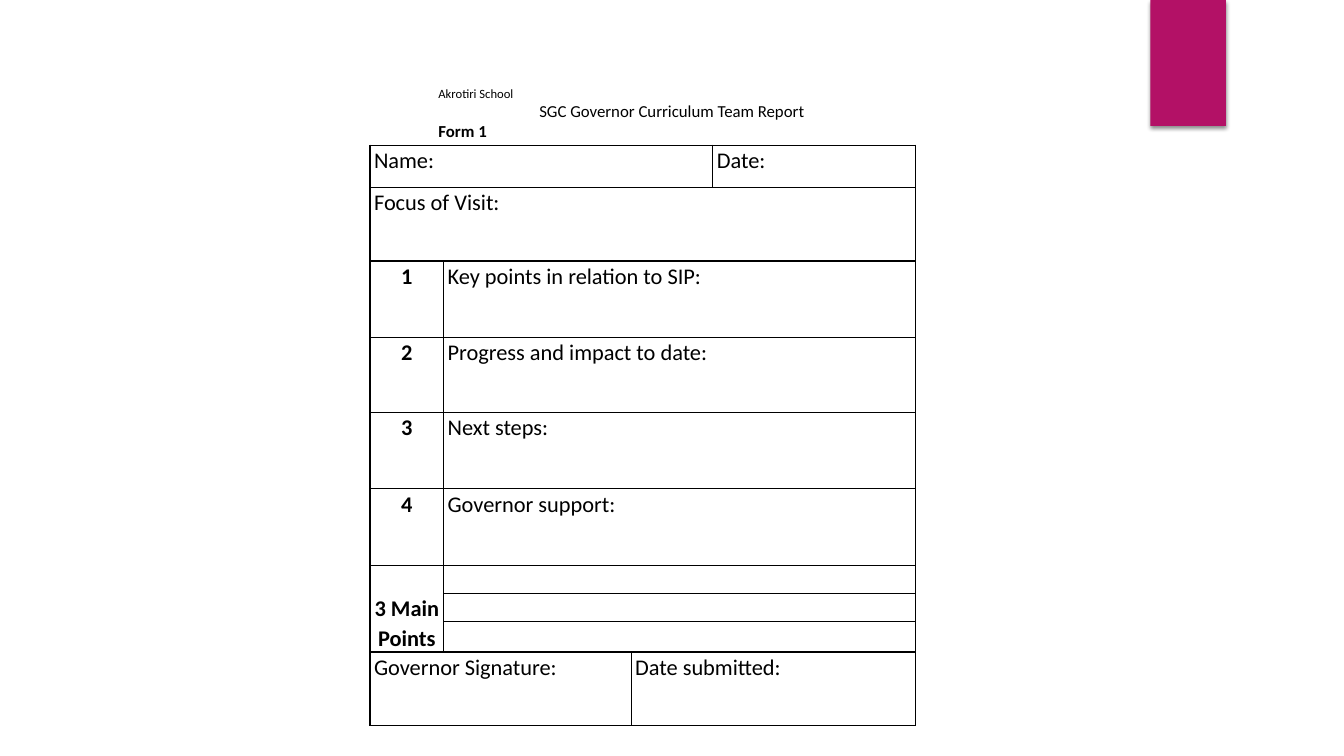
from lxml.etree import SubElement as Sub
from pptx import Presentation
from pptx.dml.color import RGBColor
from pptx.enum.shapes import MSO_SHAPE as Shape
from pptx.enum.text import MSO_ANCHOR as Anchor, PP_ALIGN as Align
from pptx.oxml.ns import qn
from pptx.util import Inches, Pt

FONT = "Calibri"
BLACK = RGBColor(0, 0, 0)
PINK = RGBColor(0xB3, 0x11, 0x66)

# text, size, bold, indent in inches
HEAD = [
    ("Akrotiri School", 9, False, 0),
    ("SGC Governor Curriculum Team Report", 12, False, 1),
    ("Form 1", 12, True, 0),
]
COLS = [0.73, 1.86, 0.81, 2.01]
ROWS = [0.42, 0.73, 0.76, 0.74, 0.76, 0.76, 0.28, 0.28, 0.3, 0.73]
TOPICS = ["Key points in relation to SIP:", "Progress and impact to date:",
          "Next steps:", "Governor support:"]
# row, column, rows spanned, columns spanned, text
CELLS = [
    (0, 0, 1, 3, "Name:"),
    (0, 3, 1, 1, "Date:"),
    (1, 0, 1, 4, "Focus of Visit:"),
    (6, 0, 3, 1, "3 Main Points"),
    (9, 0, 1, 2, "Governor Signature:"),
    (9, 2, 1, 2, "Date submitted:"),
]
for row, topic in enumerate(TOPICS, 2):
    CELLS += [(row, 0, 1, 1, str(row - 1)), (row, 1, 1, 3, topic)]
CELLS += [(row, 1, 1, 3, "") for row in (6, 7, 8)]


def style(para, size, bold):
    for run in para.runs:
        font = run.font
        font.name, font.size, font.bold = FONT, Pt(size), bold
        font.color.rgb = BLACK


def add_tab(slide):
    tab = slide.shapes.add_shape(
        Shape.RECTANGLE, Inches(11.41), 0, Inches(0.75), Inches(1.25))
    tab.fill.solid()
    tab.fill.fore_color.rgb = PINK
    tab.line.fill.background()
    tab.shadow.inherit = False
    glow = Sub(tab.element.spPr.find(qn("a:effectLst")), qn("a:outerShdw"),
               blurRad=str(Pt(3)), dist=str(Pt(2)), dir="5400000", rotWithShape="0")
    tone = Sub(glow, qn("a:srgbClr"), val=str(BLACK))
    Sub(tone, qn("a:alpha"), val="45000")


def add_head(slide):
    box = slide.shapes.add_textbox(
        Inches(4.25), Inches(0.8), Inches(4.68), Inches(0.64))
    frame = box.text_frame
    frame.word_wrap = True
    frame.text = "\n".join(text for text, *_ in HEAD)
    for para, (_, size, bold, indent) in zip(frame.paragraphs, HEAD):
        style(para, size, bold)
        if indent:
            props = para._p.get_or_add_pPr()
            props.set("marL", str(Inches(indent)))
            props.set("indent", "0")


def prepare(cell):
    """Give a cell its borders, margins and clear fill."""
    cell.margin_left = cell.margin_right = Inches(0.04)
    cell.margin_top = cell.margin_bottom = 0
    props = cell._tc.get_or_add_tcPr()
    for side in ("lnL", "lnR", "lnT", "lnB"):
        line = Sub(props, qn("a:" + side), w=str(Pt(1)))
        Sub(Sub(line, qn("a:solidFill")), qn("a:srgbClr"), val=str(BLACK))
    cell.fill.background()


def add_form(slide):
    form = slide.shapes.add_table(
        len(ROWS), len(COLS), Inches(3.67), Inches(1.44),
        Inches(sum(COLS)), Inches(sum(ROWS))).table
    form.first_row = form.horz_banding = False
    for col, width in zip(form.columns, COLS):
        col.width = Inches(width)
    for row, height in zip(form.rows, ROWS):
        row.height = Inches(height)
    for cell in form.iter_cells():
        prepare(cell)
    for row, col, down, across, text in CELLS:
        cell = form.cell(row, col)
        if down * across > 1:
            cell.merge(form.cell(row + down - 1, col + across - 1))
        cell.text = text
        para = cell.text_frame.paragraphs[0]
        para.line_spacing = 1.07
        mark = col == 0 and across == 1
        if mark:
            para.alignment = Align.CENTER
        if down > 1:
            cell.vertical_anchor = Anchor.BOTTOM
        style(para, 16, mark)
    for cell in form.iter_cells():
        if not cell.text:
            # keeps empty rows from growing
            Sub(cell.text_frame.paragraphs[0]._p, qn("a:endParaRPr"), sz="1200")


def main():
    deck = Presentation()
    deck.slide_width, deck.slide_height = Inches(13.33), Inches(7.5)
    slide = deck.slides.add_slide(deck.slide_layouts[6])
    add_tab(slide)
    add_form(slide)
    add_head(slide)
    deck.save("out.pptx")


if __name__ == "__main__":
    main()
